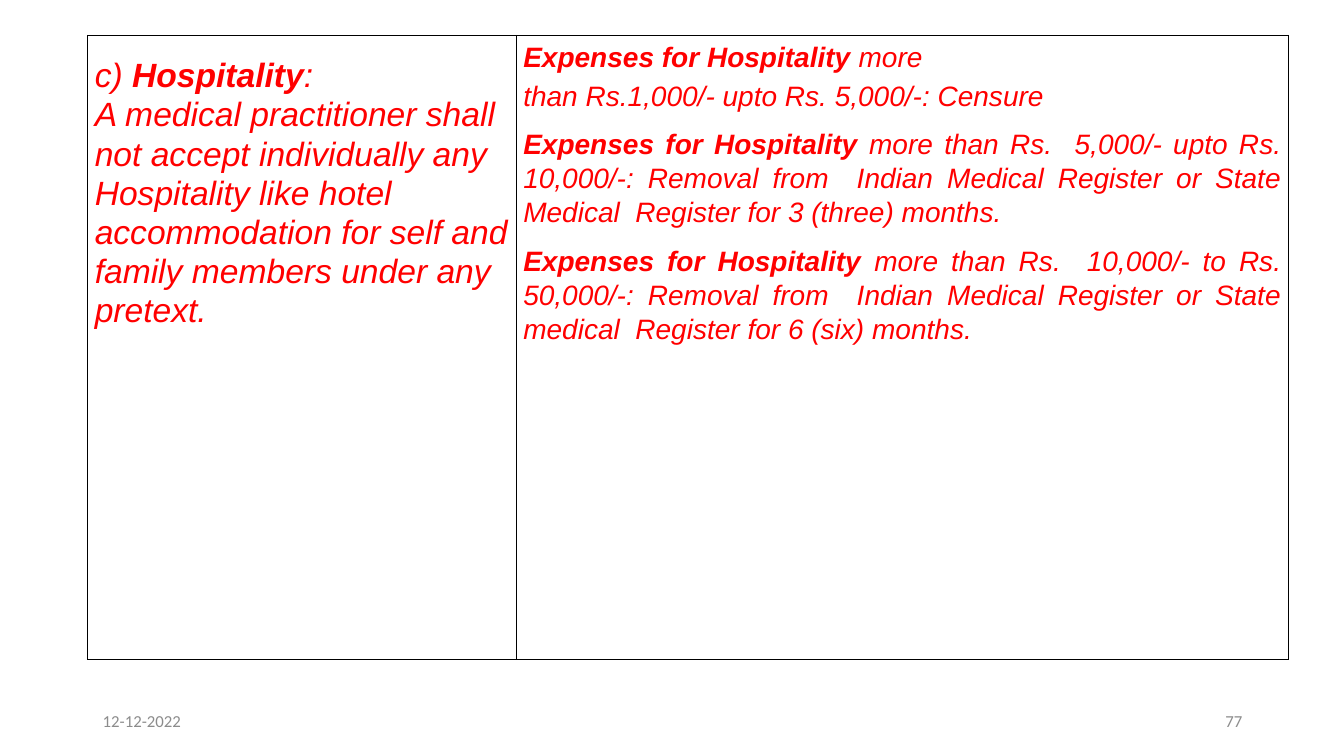
from lxml import etree
from pptx import Presentation
from pptx.dml.color import RGBColor
from pptx.enum.text import MSO_ANCHOR, PP_ALIGN
from pptx.oxml.ns import qn
from pptx.util import Inches, Pt

LEFT, RIGHT, JUSTIFY = PP_ALIGN.LEFT, PP_ALIGN.RIGHT, PP_ALIGN.JUSTIFY
MIDDLE = MSO_ANCHOR.MIDDLE
RED = RGBColor(0xFF, 0x00, 0x00)
GREY = RGBColor(0x8C, 0x8C, 0x8C)
BLACK = RGBColor(0x00, 0x00, 0x00)

COLUMNS = (4.25, 7.66)
ROWS = (3.45, 1.19, 1.19, 0.36)
EXPENSES = "Expenses for Hospitality "
RULE = (
    (("c) ", False), ("Hospitality", True), (":", False)),
    (("A medical practitioner shall not accept individually any Hospitality "
      "like hotel accommodation for self and family members under any pretext.", False),),
)
CENSURE = (
    ((EXPENSES, True), ("more", False)),
    (("than Rs.1,000/- upto Rs. 5,000/-: Censure", False),),
)
REMOVALS = (
    "more than Rs.  5,000/- upto Rs. 10,000/-: Removal from  Indian Medical "
    "Register or State Medical  Register for 3 (three) months.",
    "more than Rs.  10,000/- to Rs. 50,000/-: Removal from  Indian Medical "
    "Register or State medical  Register for 6 (six) months.",
)


def add_text(p, text, size=20, font="Arial", color=RED, bold=False, italic=True):
    r = p.add_run()
    r.text = text
    r.font.size = Pt(size)
    r.font.name = font
    r.font.color.rgb = color
    r.font.bold = bold
    r.font.italic = italic


def add_paragraph(tf, runs, size=20, align=LEFT, spacing=1.0, before=0):
    p = tf.paragraphs[0]
    if p.runs:
        p = tf.add_paragraph()
    p.alignment = align
    p.line_spacing = spacing
    p.space_before = Pt(before)
    for text, bold in runs:
        add_text(p, text, size=size, bold=bold)


def set_borders(cell, visible):
    tc_pr = cell._tc.get_or_add_tcPr()
    for i, side in enumerate("LRTB"):
        ln = etree.Element(qn(f"a:ln{side}"), w=str(Pt(0.5)))
        if side in visible:
            fill = etree.SubElement(ln, qn("a:solidFill"))
            etree.SubElement(fill, qn("a:srgbClr"), val=str(BLACK))
        else:
            etree.SubElement(ln, qn("a:noFill"))
        tc_pr.insert(i, ln)


def fill_rule(cell):
    cell.margin_top = Inches(0.2)
    for runs in RULE:
        add_paragraph(cell.text_frame, runs, size=24, spacing=Pt(28))


def fill_penalties(cell):
    cell.margin_right = Inches(0.07)
    tf = cell.text_frame
    for runs in CENSURE:
        add_paragraph(tf, runs, align=JUSTIFY, spacing=Pt(27.4))
    for text in REMOVALS:
        add_paragraph(tf, ((EXPENSES, True), (text, False)),
                      align=JUSTIFY, spacing=1.09, before=10.4)


def add_penalty_table(s, left, top):
    frame = s.shapes.add_table(len(ROWS), len(COLUMNS), Inches(left), Inches(top),
                               Inches(sum(COLUMNS)), Inches(sum(ROWS)))
    table = frame.table
    table.first_row = table.horz_banding = False
    for column, width in zip(table.columns, COLUMNS):
        column.width = Inches(width)
    for i, height in enumerate(ROWS):
        table.rows[i].height = Inches(height)
        sides = "LR" + ("T" if i == 0 else "") + ("B" if i == len(ROWS) - 1 else "")
        for cell in table.rows[i].cells:
            cell.margin_left = Inches(0.07)
            cell.margin_right = cell.margin_top = cell.margin_bottom = 0
            cell.fill.background()
            set_borders(cell, sides)
    fill_rule(table.cell(0, 0))
    fill_penalties(table.cell(0, 1))


def add_footer(s, left, top, width, height):
    box_width = 3
    for x, text, align in ((left, "12-12-2022", LEFT),
                           (left + width - box_width, "77", RIGHT)):
        sp = s.shapes.add_textbox(Inches(x), Inches(top), Inches(box_width), Inches(height))
        tf = sp.text_frame
        tf.word_wrap = True
        tf.vertical_anchor = MIDDLE
        p = tf.paragraphs[0]
        p.alignment = align
        add_text(p, text, size=12, font="Calibri", color=GREY, italic=False)


def main():
    prs = Presentation()
    prs.slide_width = Inches(13.33)
    prs.slide_height = Inches(7.5)
    s = prs.slides.add_slide(prs.slide_layouts[6])
    add_penalty_table(s, 0.87, 0.35)
    add_footer(s, 0.92, 6.95, 11.5, 0.4)
    prs.save("out.pptx")


if __name__ == "__main__":
    main()
